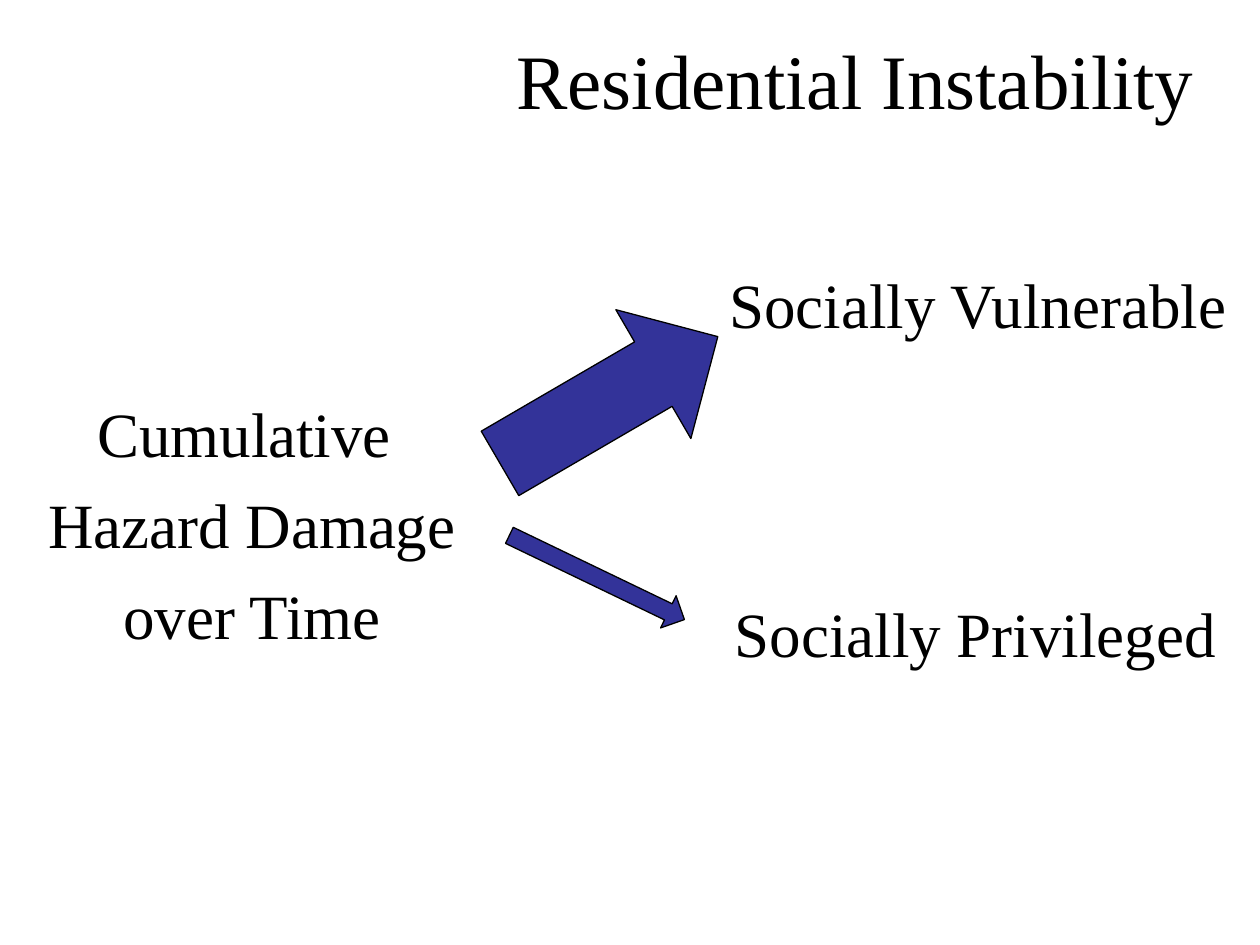
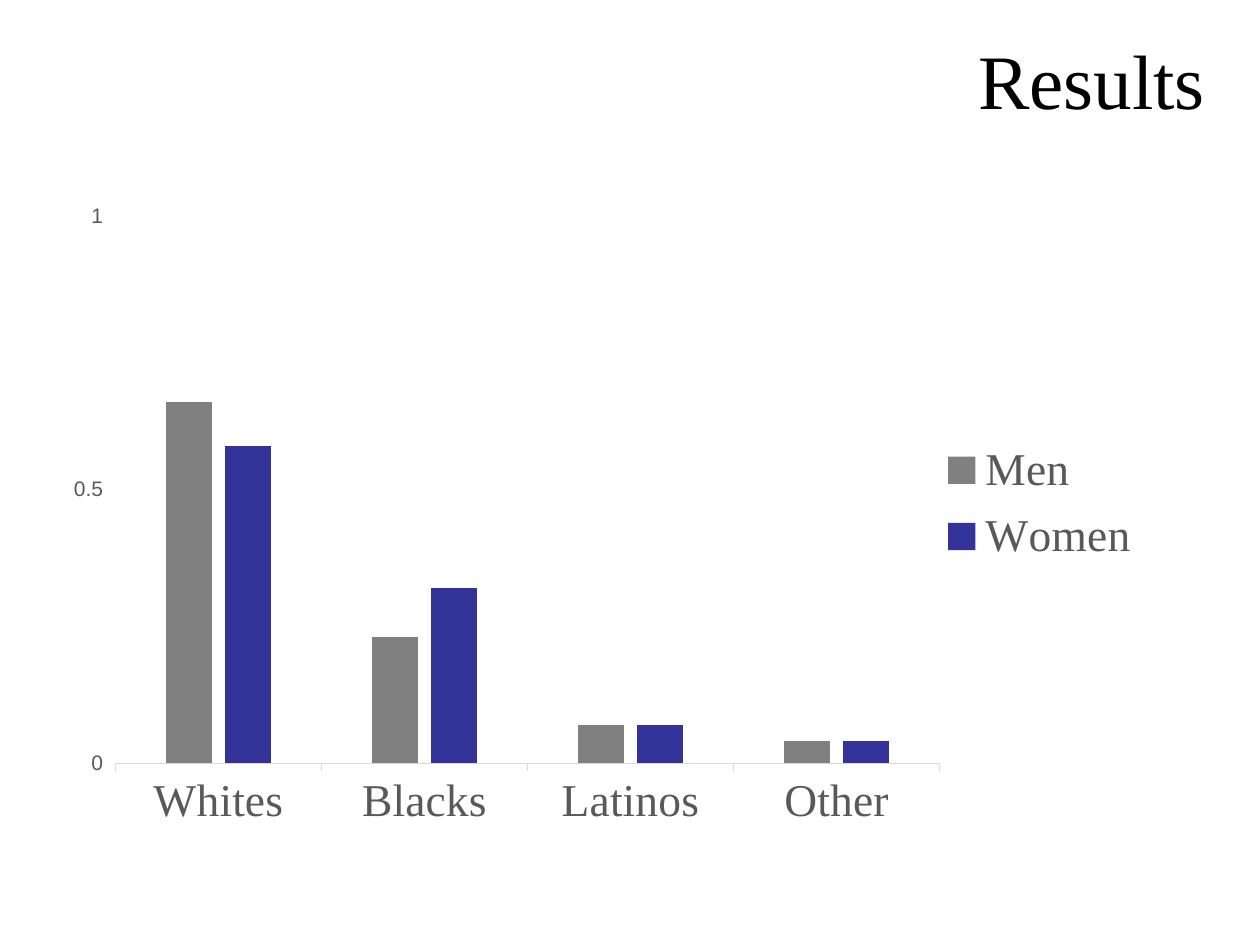
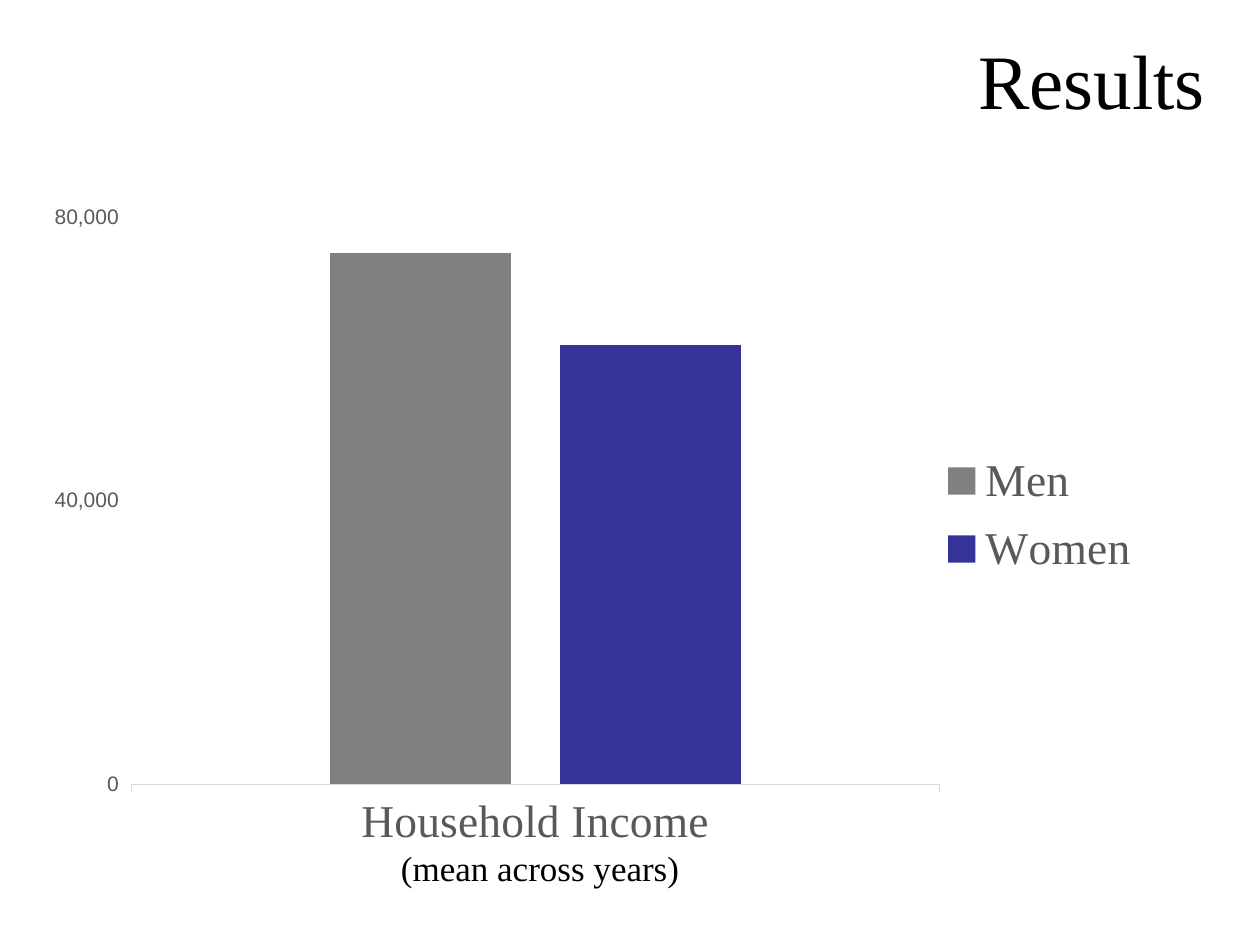
import dataclasses

import pptx
import pptx.chart.data
import pptx.dml.color
import pptx.enum.chart
import pptx.enum.shapes
import pptx.enum.text
import pptx.oxml
import pptx.oxml.ns
import pptx.util

Pt = pptx.util.Pt
Align = pptx.enum.text.PP_ALIGN
Anchor = pptx.enum.text.MSO_ANCHOR
COLS, ROWS = 120, 90


@dataclasses.dataclass(frozen=True)
class Theme:
    serif: str = "Times New Roman"
    sans: str = "Arial"
    ink: str = "000000"
    label: str = "595959"
    rule: str = "D9D9D9"
    blue: str = "333399"
    gray: str = "808080"
    title: int = 44
    body: int = 36
    key: int = 26
    note: int = 20
    tick: int = 12
    base: int = 10
    line: float = 0.75
    gap: float = 8.8


def rgb(code):
    return pptx.dml.color.RGBColor.from_string(code)


def style(font, face, size, color):
    font.name, font.size = face, Pt(size)
    font.color.rgb = rgb(color)


def layout(box, frame, inner=False):
    """Return a manual chart layout that puts box inside frame."""
    left, top, wide, high = box
    x, y, w, h = frame
    parts = {"xMode": "edge", "yMode": "edge",
             "x": (left - x) / w, "y": (top - y) / h,
             "w": wide / w, "h": high / h}
    if inner:
        parts = {"layoutTarget": "inner", **parts}
    body = "".join(f'<c:{tag} val="{val}"/>' for tag, val in parts.items())
    space = pptx.oxml.ns.nsdecls("c")
    return pptx.oxml.parse_xml(
        f"<c:layout {space}><c:manualLayout>{body}</c:manualLayout></c:layout>")


def place(node, item, index):
    for old in node.findall(pptx.oxml.ns.qn("c:layout")):
        node.remove(old)
    node.insert(index, item)


class Deck:
    def __init__(self, theme):
        self.theme = theme
        self.show = pptx.Presentation()
        self.show.slide_width = pptx.util.Inches(10)
        self.show.slide_height = pptx.util.Inches(7.5)
        self.slide = None

    def grid(self, box):
        """Turn columns and rows into slide lengths."""
        across = self.show.slide_width / COLS
        down = self.show.slide_height / ROWS
        return [round(n * unit) for n, unit in zip(box, (across, down) * 2)]

    def fill(self, frame, text, size, align):
        """Put styled text into a text frame."""
        frame.text = text
        frame.word_wrap = True
        for i, para in enumerate(frame.paragraphs):
            para.alignment = align
            if i:
                para.space_before = Pt(self.theme.gap)
            for run in para.runs:
                style(run.font, self.theme.serif, size, self.theme.ink)

    def page(self, title, col=45):
        self.slide = self.show.slides.add_slide(self.show.slide_layouts[5])
        head = self.slide.shapes.title
        head.left, head.top, head.width, head.height = self.grid((col, 0, 71, 15))
        self.fill(head.text_frame, title, self.theme.title, Align.RIGHT)
        head.text_frame.vertical_anchor = Anchor.MIDDLE

    def text(self, box, text, size, align, inset=1.2):
        frame = self.slide.shapes.add_textbox(*self.grid(box)).text_frame
        frame.margin_top = self.grid((0, inset))[1]
        self.fill(frame, text, size, align)

    def arrow(self, box, turn):
        kind = pptx.enum.shapes.MSO_SHAPE.RIGHT_ARROW
        shape = self.slide.shapes.add_shape(kind, *self.grid(box))
        shape.rotation = turn
        shape.shadow.inherit = False
        shape.fill.solid()
        shape.fill.fore_color.rgb = rgb(self.theme.blue)
        shape.line.color.rgb = rgb(self.theme.ink)
        shape.line.width = Pt(self.theme.line)

    def chart(self, box, plot, cats, men, women, top, form="General"):
        look, enum = self.theme, pptx.enum.chart
        data = pptx.chart.data.CategoryChartData(number_format=form)
        data.categories = cats
        data.add_series("Men", men)
        data.add_series("Women", women)
        chart = self.slide.shapes.add_chart(
            enum.XL_CHART_TYPE.COLUMN_CLUSTERED, *self.grid(box), data).chart
        chart.has_title = False
        style(chart.font, look.sans, look.base, look.ink)

        bars = chart.plots[0]
        bars.gap_width, bars.overlap = 219, -27
        bars.vary_by_categories = False
        for series, color in zip(bars.series, (look.gray, look.blue)):
            series.format.fill.solid()
            series.format.fill.fore_color.rgb = rgb(color)

        names, scale = chart.category_axis, chart.value_axis
        for axis in (names, scale):
            axis.has_major_gridlines = False
            axis.major_tick_mark = enum.XL_TICK_MARK.OUTSIDE
        style(names.tick_labels.font, look.serif, look.key, look.label)
        style(scale.tick_labels.font, look.sans, look.tick, look.label)
        names.format.line.color.rgb = rgb(look.rule)
        names.format.line.width = Pt(look.line)
        scale.format.line.fill.background()
        scale.minimum_scale, scale.maximum_scale = 0, top
        scale.major_unit = top / 2
        scale.tick_labels.number_format = form
        scale.tick_labels.number_format_is_linked = False

        chart.has_legend = True
        key = chart.legend
        key.position = enum.XL_LEGEND_POSITION.RIGHT
        key.include_in_layout = False
        style(key.font, look.serif, look.key, look.label)

        left, up, wide, high = plot
        spot = (left + wide, up + 0.39 * high, 19, 0.27 * high)
        place(chart._chartSpace.chart.plotArea, layout(plot, box, True), 0)
        place(key._element, layout(spot, box), 1)


def main():
    look = Theme()
    deck = Deck(look)

    deck.page("Residential Instability", col=44)
    deck.text((3, 36.4, 42, 31), "Cumulative \nHazard Damage\nover Time",
              look.body, Align.CENTER)
    deck.arrow((46, 31, 24, 14.2), 329.8)
    deck.text((62, 24.1, 56, 9), "Socially Vulnerable", look.body, Align.RIGHT)
    deck.arrow((47.6, 53.3, 18.5, 3.4), 25.7)
    deck.text((61, 55.4, 56, 9), "Socially Privileged", look.body, Align.RIGHT)

    deck.page("Results")
    deck.chart((5, 18.4, 108, 61.7), (11, 20.6, 78.5, 52.1),
               ["Whites", "Blacks", "Latinos", "Other"],
               [0.66, 0.23, 0.07, 0.04], [0.58, 0.32, 0.07, 0.04], 1)

    deck.page("Results")
    deck.chart((3, 18.4, 110, 63.7), (12.5, 20.7, 77, 54),
               ["Household Income"], [75000], [62000], 80000, "#,##0")
    deck.text((37, 80, 34, 5.3), "(mean across years)", look.note, Align.LEFT,
              inset=0.6)

    deck.show.save("out.pptx")


if __name__ == "__main__":
    main()
